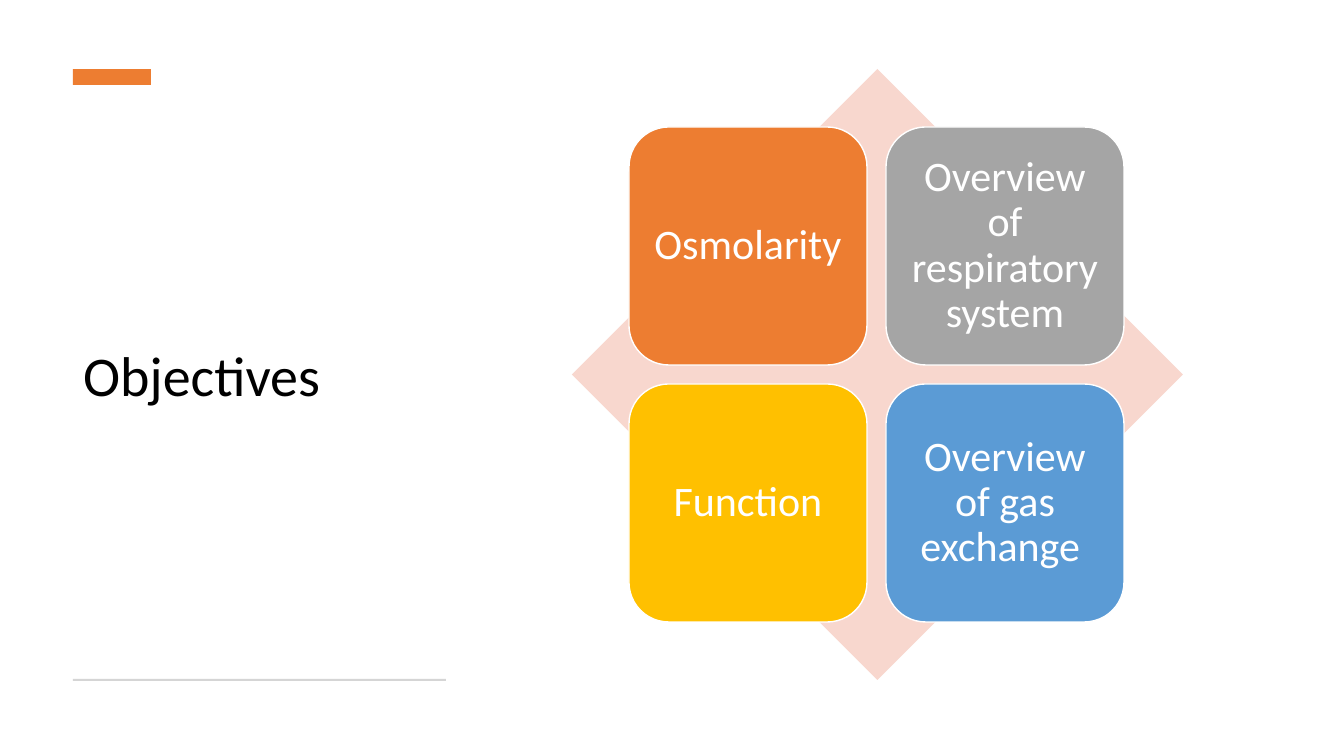
from pptx import Presentation
from pptx.dml.color import RGBColor
from pptx.enum.shapes import MSO_SHAPE
from pptx.enum.text import MSO_ANCHOR, MSO_AUTO_SIZE, PP_ALIGN
from pptx.util import Emu, Pt

RECTANGLE = MSO_SHAPE.RECTANGLE
DIAMOND = MSO_SHAPE.DIAMOND
ROUNDED = MSO_SHAPE.ROUNDED_RECTANGLE
MIDDLE = MSO_ANCHOR.MIDDLE
NO_AUTOFIT = MSO_AUTO_SIZE.NONE
LEFT, CENTER = PP_ALIGN.LEFT, PP_ALIGN.CENTER

BLACK = RGBColor(0x00, 0x00, 0x00)
WHITE = RGBColor(0xFF, 0xFF, 0xFF)
ORANGE = RGBColor(0xED, 0x7D, 0x31)
GRAY = RGBColor(0xA5, 0xA5, 0xA5)
GOLD = RGBColor(0xFF, 0xC0, 0x00)
BLUE = RGBColor(0x5B, 0x9B, 0xD5)
LIGHT_GRAY = RGBColor(0xD5, 0xD5, 0xD5)
PALE_ORANGE = RGBColor(0xF8, 0xD7, 0xCE)

FONT = "Calibri"
TITLE_ONLY = 5
PX_PER_INCH = 100.8

OBJECTIVES = [
    ("Osmolarity ", ORANGE),
    ("Overview of respiratory system", GRAY),
    ("Function", GOLD),
    ("Overview of gas exchange ", BLUE),
]
COLUMNS = 2
TILE_LEFT, TILE_TOP, TILE_SIZE, TILE_PITCH = 629, 127, 238, 257
TILE_INSET = 12


def px(length):
    return Emu(round(length * 914400 / PX_PER_INCH))


class SlideBuilder:
    """Holds the text style and the slide being filled."""

    def __init__(self, deck):
        self.slide = deck.slides.add_slide(deck.slide_layouts[TITLE_ONLY])
        self.font = FONT

    def set_text(self, shape, text, size, color, align=LEFT, space_after=0):
        frame = shape.text_frame
        frame.word_wrap = True
        frame.auto_size = NO_AUTOFIT
        frame.vertical_anchor = MIDDLE
        para = frame.paragraphs[0]
        para.alignment = align
        para.line_spacing = 0.9
        para.space_after = Pt(space_after)
        span = para.add_run()
        span.text = text
        span.font.name = self.font
        span.font.size = Pt(size)
        span.font.color.rgb = color

    def title(self, text, left, top, width, height):
        title = self.slide.shapes.title
        title.left, title.top = px(left), px(top)
        title.width, title.height = px(width), px(height)
        self.set_text(title, text, size=40, color=BLACK)

    def shape(self, kind, left, top, width, height, fill, outline=None):
        shape = self.slide.shapes.add_shape(
            kind, px(left), px(top), px(width), px(height))
        shape.shadow.inherit = False
        shape.fill.solid()
        shape.fill.fore_color.rgb = fill
        if outline is None:
            shape.line.fill.background()
        else:
            shape.line.color.rgb = outline
            shape.line.width = Pt(1)
        return shape

    def tile(self, text, left, top, fill):
        tile = self.shape(ROUNDED, left, top, TILE_SIZE, TILE_SIZE, fill, WHITE)
        frame = tile.text_frame
        frame.margin_left = frame.margin_right = px(TILE_INSET)
        frame.margin_top = frame.margin_bottom = px(TILE_INSET)
        self.set_text(tile, text, size=30, color=WHITE, align=CENTER,
                      space_after=10.5)


def main():
    deck = Presentation()
    deck.slide_width, deck.slide_height = px(1344), px(756)
    page = SlideBuilder(deck)

    page.title("Objectives", 73, 106, 373, 545)
    page.shape(RECTANGLE, 73, 69, 78, 16, ORANGE)
    page.shape(RECTANGLE, 73, 679, 373, 2, LIGHT_GRAY)

    page.shape(DIAMOND, 572, 69, 611, 611, PALE_ORANGE)
    for index, (text, fill) in enumerate(OBJECTIVES):
        row, column = divmod(index, COLUMNS)
        page.tile(text, TILE_LEFT + column * TILE_PITCH,
                  TILE_TOP + row * TILE_PITCH, fill)

    deck.save("out.pptx")


if __name__ == "__main__":
    main()
